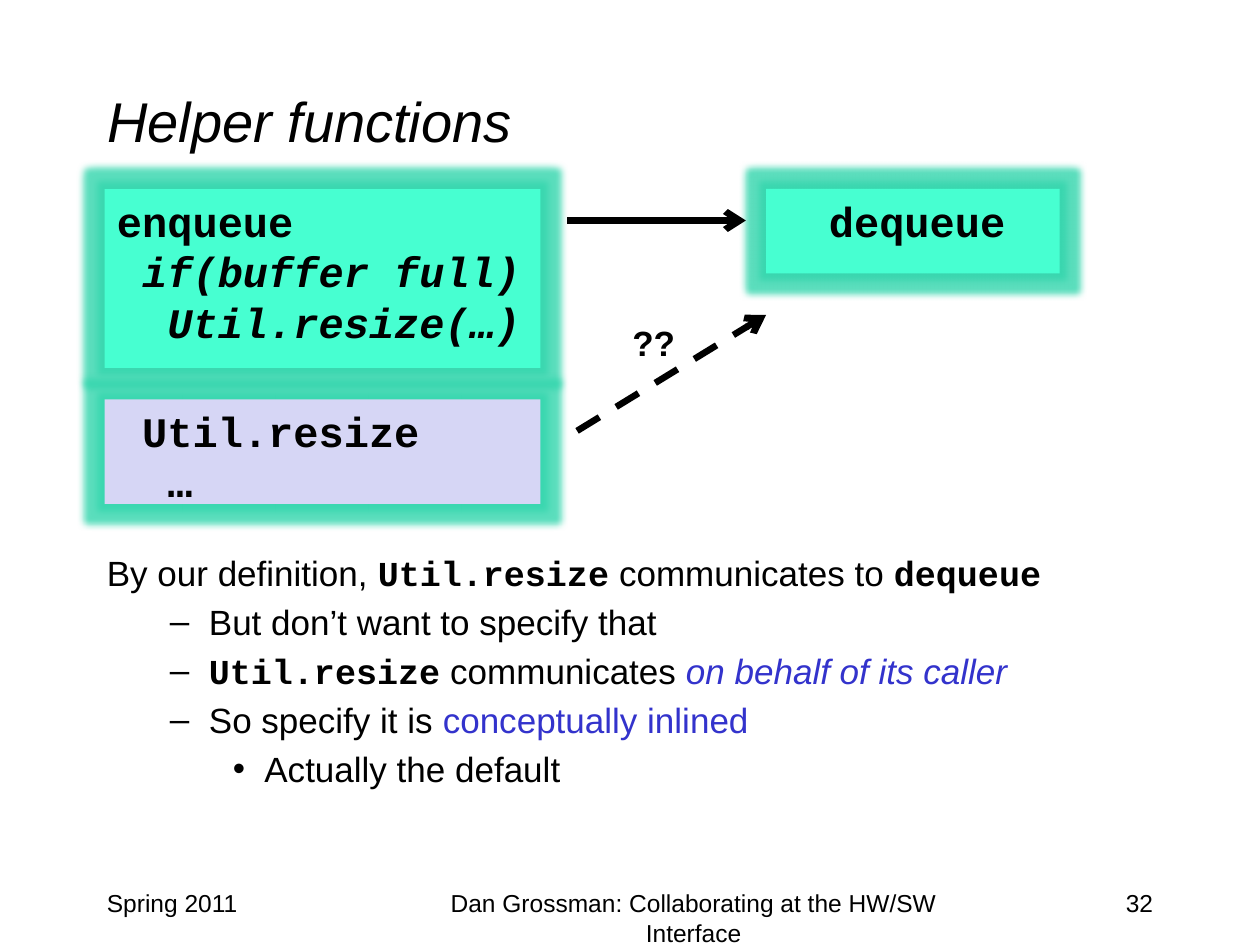
from dataclasses import dataclass

from lxml.etree import SubElement
from pptx import Presentation
from pptx.dml.color import RGBColor
from pptx.enum.dml import MSO_LINE_DASH_STYLE as Dash
from pptx.enum.shapes import MSO_CONNECTOR, MSO_SHAPE
from pptx.enum.text import MSO_ANCHOR as Anchor, PP_ALIGN as Align
from pptx.oxml.ns import qn
from pptx.util import Inches, Pt

COLORS = {"text": "000000", "accent": "3333CC", "caller": "47FFD1",
          "helper": "D6D6F5", "glow": "33D6AD"}
SANS, MONO = "Arial", "Courier New"


@dataclass
class Span:
    text: str
    font: str = SANS
    bold: bool = False
    italic: bool = False
    color: str = "text"


@dataclass
class Point:
    level: int
    spans: list[Span]


@dataclass
class CodeBox:
    left: float
    top: float
    width: float
    height: float
    fill: str
    lines: list[list[Span]]


@dataclass
class Arrow:
    start: tuple[float, float]
    end: tuple[float, float]
    dashed: bool = False


@dataclass
class Label:
    left: float
    top: float
    width: float
    height: float
    span: Span
    size: int = 14
    align: Align = Align.LEFT
    wrap: bool = True


def rgb(key: str) -> RGBColor:
    return RGBColor.from_string(COLORS[key])


def code(text: str, italic: bool = False) -> Span:
    return Span(text, MONO, bold=True, italic=italic)


def write_spans(paragraph, spans: list[Span], size: int) -> None:
    for span in spans:
        run = paragraph.add_run()
        run.text = span.text
        font = run.font
        font.name, font.size = span.font, Pt(size)
        font.bold, font.italic = span.bold, span.italic
        font.color.rgb = rgb(span.color)


def paragraph_at(frame, index: int):
    return frame.add_paragraph() if index else frame.paragraphs[0]


def add_code_box(slide, box: CodeBox) -> None:
    shape = slide.shapes.add_shape(
        MSO_SHAPE.RECTANGLE, Inches(box.left), Inches(box.top),
        Inches(box.width), Inches(box.height))
    shape.fill.solid()
    shape.fill.fore_color.rgb = rgb(box.fill)
    shape.line.fill.background()
    shape.shadow.inherit = False
    # Soft glow around the box
    effects = shape._element.spPr.find(qn("a:effectLst"))
    glow = SubElement(effects, qn("a:glow"), rad=str(Pt(8)))
    glow_color = SubElement(glow, qn("a:srgbClr"), val=COLORS["glow"])
    SubElement(glow_color, qn("a:alpha"), val="80000")

    frame = shape.text_frame
    frame.word_wrap = True
    frame.vertical_anchor = Anchor.TOP
    for index, spans in enumerate(box.lines):
        paragraph = paragraph_at(frame, index)
        paragraph.alignment = Align.LEFT
        write_spans(paragraph, spans, 24)


def add_arrow(slide, arrow: Arrow) -> None:
    connector = slide.shapes.add_connector(
        MSO_CONNECTOR.STRAIGHT, *map(Inches, arrow.start + arrow.end))
    connector.line.color.rgb = rgb("text")
    connector.line.width = Pt(3.75)
    if arrow.dashed:
        connector.line.dash_style = Dash.DASH
    SubElement(connector.line._get_or_add_ln(), qn("a:tailEnd"), type="arrow")
    SubElement(connector._element.spPr, qn("a:effectLst"))


def add_label(slide, label: Label) -> None:
    frame = slide.shapes.add_textbox(
        Inches(label.left), Inches(label.top),
        Inches(label.width), Inches(label.height)).text_frame
    frame.word_wrap = label.wrap
    frame.paragraphs[0].alignment = label.align
    write_spans(frame.paragraphs[0], [label.span], label.size)


def add_points(slide, points: list[Point]) -> None:
    bullets = {1: ("–", 0.81, -0.31), 2: ("•", 1.25, -0.25)}
    frame = slide.shapes.add_textbox(
        Inches(0.75), Inches(4.33), Inches(8.5), Inches(2.33)).text_frame
    frame.word_wrap = True
    for index, point in enumerate(points):
        paragraph = paragraph_at(frame, index)
        paragraph.level = point.level
        paragraph.space_before = Pt(4)
        if point.level in bullets:
            mark, margin, indent = bullets[point.level]
            properties = paragraph._p.get_or_add_pPr()
            properties.set("marL", str(Inches(margin)))
            properties.set("indent", str(Inches(indent)))
            SubElement(properties, qn("a:buFont"), typeface=SANS)
            SubElement(properties, qn("a:buChar"), char=mark)
        write_spans(paragraph, point.spans, 20)


CODE_BOXES = [
    CodeBox(0.83, 1.5, 3.46, 1.42, "caller", [
        [code("enqueue")],
        [code(" "), code("if(buffer full)", italic=True)],
        [code("  Util.resize(…)", italic=True)]]),
    CodeBox(6.08, 1.5, 2.33, 0.67, "caller", [[code("  dequeue")]]),
    CodeBox(0.83, 3.17, 3.46, 0.83, "helper",
            [[code(" Util.resize")], [code("  …")]]),
]
ARROWS = [
    Arrow((4.5, 1.75), (5.92, 1.75)),
    Arrow((4.58, 3.42), (6.08, 2.5), dashed=True),
]
POINTS = [
    Point(0, [Span("By our definition, "), code("Util.resize"),
              Span(" communicates to "), code("dequeue")]),
    Point(1, [Span("But don’t want to specify that")]),
    Point(1, [code("Util.resize"), Span(" communicates "),
              Span("on behalf of its caller", italic=True, color="accent")]),
    Point(1, [Span("So specify it is "),
              Span("conceptually inlined", color="accent")]),
    Point(2, [Span("Actually the default")]),
]
LABELS = [
    Label(4.92, 2.5, 0.55, 0.44, Span("??", bold=True), size=20, wrap=False),
    Label(0.75, 7, 2.08, 0.5, Span("Spring 2011")),
    Label(3.17, 7, 4.67, 0.5,
          Span("Dan Grossman: Collaborating at the HW/SW Interface"),
          align=Align.CENTER),
    Label(7.17, 7, 2.08, 0.5, Span("32"), align=Align.RIGHT),
]


def main() -> None:
    deck = Presentation()
    deck.slide_width, deck.slide_height = Inches(10), Inches(7.5)
    slide = deck.slides.add_slide(deck.slide_layouts[5])

    # Title
    title = slide.shapes.title
    title.left, title.top = Inches(0.75), Inches(0.33)
    title.width, title.height = Inches(8.5), Inches(1.25)
    title.text_frame.vertical_anchor = Anchor.MIDDLE
    heading = title.text_frame.paragraphs[0]
    heading.alignment = Align.LEFT
    write_spans(heading, [Span("Helper functions", italic=True)], 32)

    # Call diagram, explanation and footer
    add_points(slide, POINTS)
    for box in CODE_BOXES:
        add_code_box(slide, box)
    for arrow in ARROWS:
        add_arrow(slide, arrow)
    for label in LABELS:
        add_label(slide, label)

    deck.save("out.pptx")


if __name__ == "__main__":
    main()
